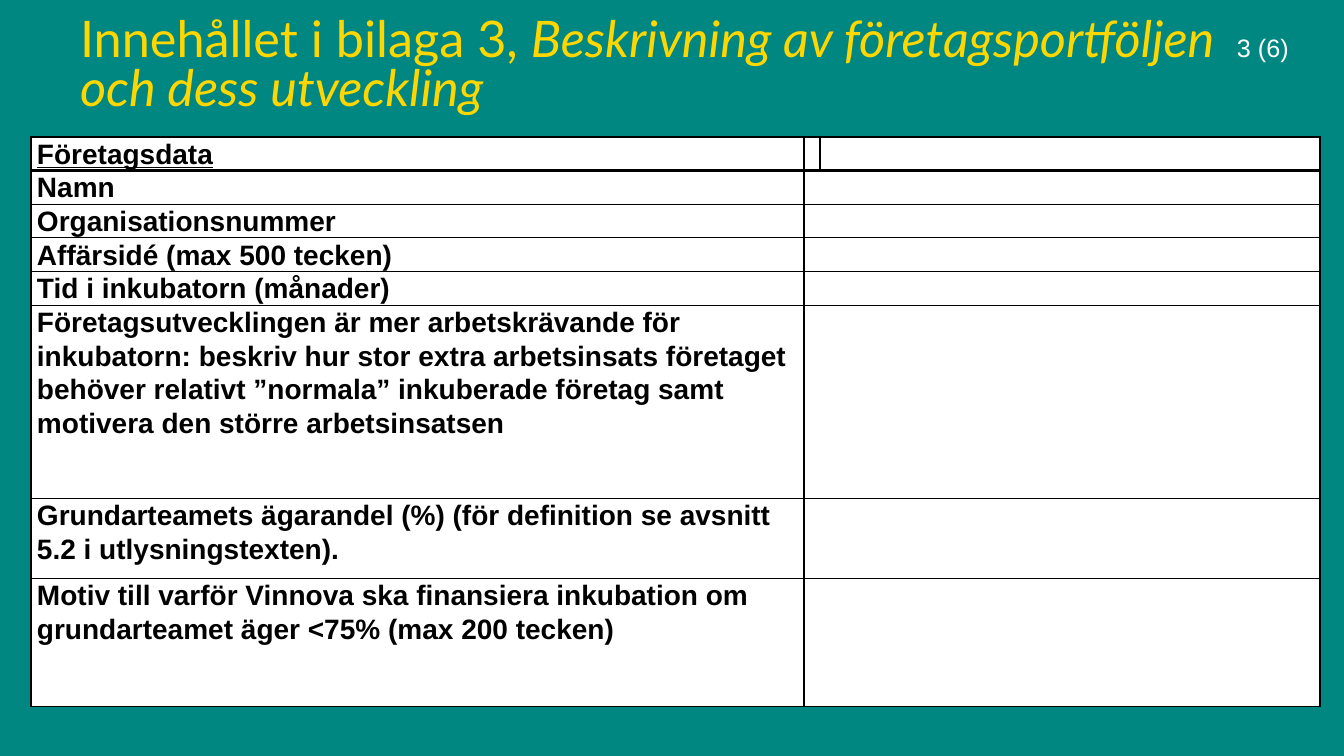
"""Build the slide on company data in appendix 3."""
from lxml import etree
from pptx import Presentation, util as u
from pptx.dml.color import RGBColor
from pptx.enum import text
from pptx.oxml.ns import qn

COLOURS = {"teal": "008782", "gold": "FFD700", "white": "FFFFFF", "black": "000000"}
ROWS = [
    ("Företagsdata", 33),
    ("Namn", 34),
    ("Organisationsnummer", 33),
    ("Affärsidé (max 500 tecken)", 33),
    ("Tid i inkubatorn (månader)", 34),
    ("Företagsutvecklingen är mer arbetskrävande för inkubatorn: beskriv hur stor "
     "extra arbetsinsats företaget behöver relativt ”normala” inkuberade företag "
     "samt motivera den större arbetsinsatsen", 193),
    ("Grundarteamets ägarandel (%) (för definition se avsnitt 5.2 i utlysningstexten).", 80),
    ("Motiv till varför Vinnova ska finansiera inkubation om grundarteamet äger "
     "<75% (max 200 tecken)", 128),
]
COLUMNS = [773, 16, 500]


def px(n):
    return u.Emu(round(n * 12192000 / 1344))


def style(run, font, size, colour):
    run.font.name = font
    run.font.size = u.Pt(size)
    run.font.color.rgb = RGBColor.from_string(COLOURS[colour])


deck = Presentation()
deck.slide_width, deck.slide_height = px(1344), px(756)
slide = deck.slides.add_slide(deck.slide_layouts[5])
slide.background.fill.solid()
slide.background.fill.fore_color.rgb = RGBColor.from_string(COLOURS["teal"])

heading = slide.shapes.title
heading.left, heading.top, heading.width, heading.height = px(80), px(19), px(1184), px(68)
page = slide.shapes.add_textbox(px(1237), px(32), px(52), px(30))
for box in (heading, page):
    frame = box.text_frame
    frame.margin_left = frame.margin_right = frame.margin_top = frame.margin_bottom = 0
    frame.vertical_anchor = text.MSO_ANCHOR.TOP
    frame.auto_size = text.MSO_AUTO_SIZE.NONE
    frame.word_wrap = box is heading

title_line = heading.text_frame.paragraphs[0]
title_line.alignment = text.PP_ALIGN.LEFT
title_line.line_spacing = 0.8
for words, italic in (("Innehållet i bilaga 3, ", False),
                      ("Beskrivning av företagsportföljen och dess utveckling", True)):
    run = title_line.add_run()
    run.text = words
    style(run, "Lato", 36, "gold")
    run.font.italic = italic

page.text_frame.text = "3 (6)"
style(page.text_frame.paragraphs[0].runs[0], "Arial", 18, "white")

company = slide.shapes.add_table(len(ROWS), len(COLUMNS), px(31), px(137),
                                 px(sum(COLUMNS)), px(sum(h for _, h in ROWS))).table
company.first_row = company.horz_banding = False
for column, width in zip(company.columns, COLUMNS):
    column.width = px(width)

for r, (label, height) in enumerate(ROWS):
    company.rows[r].height = px(height)
    for c in range(len(COLUMNS)):
        cell = company.cell(r, c)
        cell.margin_left = cell.margin_right = px(6)
        cell.margin_top = cell.margin_bottom = 0
        cell.fill.solid()
        cell.fill.fore_color.rgb = RGBColor.from_string(COLOURS["white"])
        for i, side in enumerate(("lnL", "lnR", "lnT", "lnB")):
            thick = (r, side) in ((0, "lnB"), (1, "lnT"))
            line = etree.Element(qn("a:" + side), w=str(u.Pt(3 if thick else 1)))
            ink = etree.SubElement(line, qn("a:solidFill"))
            etree.SubElement(ink, qn("a:srgbClr"), val=COLOURS["black"])
            cell._tc.get_or_add_tcPr().insert(i, line)
    if r > 0:
        company.cell(r, 1).merge(company.cell(r, 2))
    entry = company.cell(r, 0).text_frame
    entry.text = label
    entry.paragraphs[0].line_spacing = 1.07
    run = entry.paragraphs[0].runs[0]
    style(run, "Arial", 20, "black")
    run.font.bold = True
    run.font.underline = r == 0

deck.save("out.pptx")
